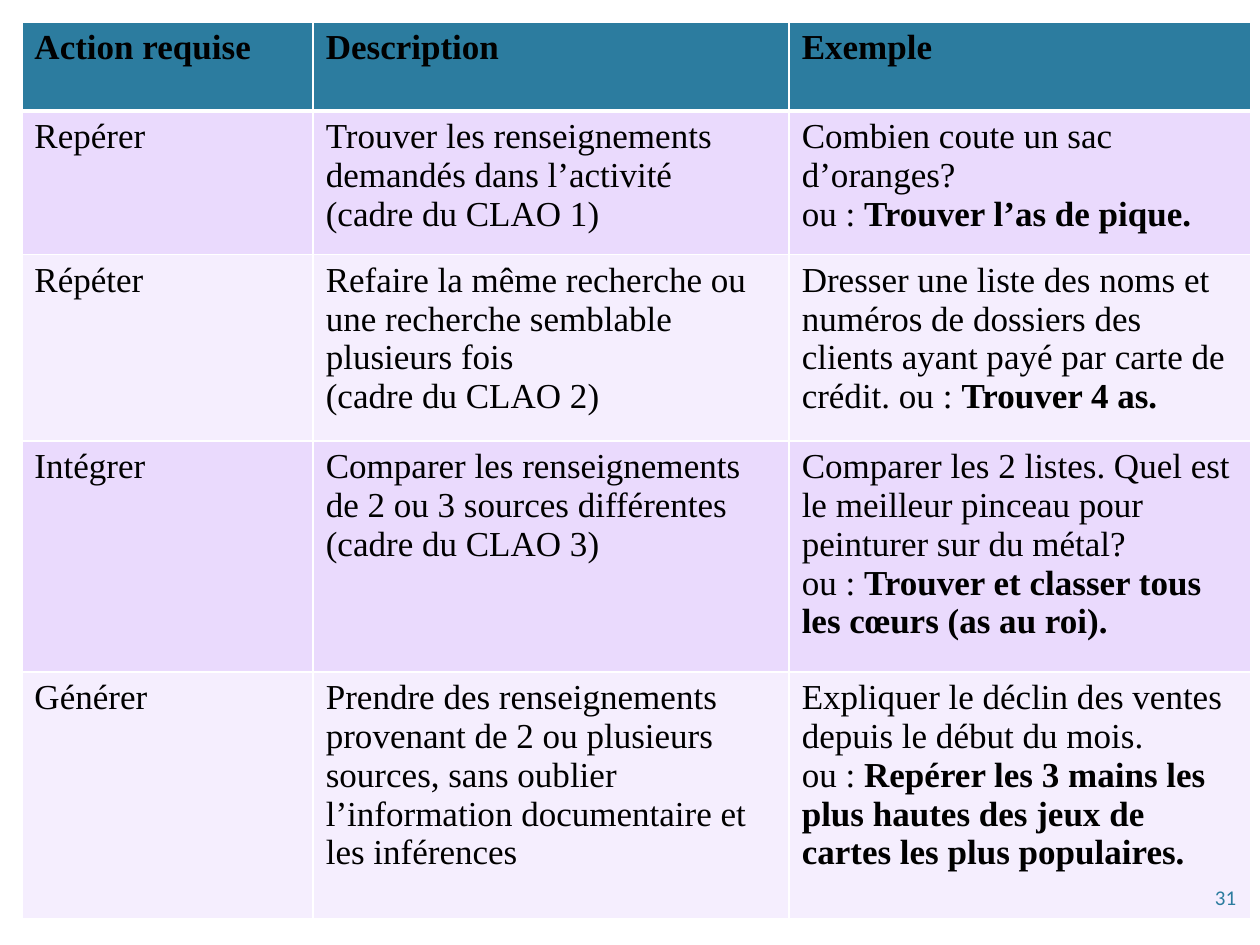
from dataclasses import dataclass

from lxml import etree
from pptx import Presentation
from pptx.dml.color import RGBColor
from pptx.enum import text as t
from pptx.oxml import ns
from pptx.table import _Cell
from pptx.text.text import TextFrame
from pptx.util import Pt

BLUE = RGBColor(0x2C, 0x7C, 0x9F)
LILAC = RGBColor(0xEA, 0xDA, 0xFD)
PALE = RGBColor(0xF5, 0xEE, 0xFE)
BLACK = RGBColor(0, 0, 0)
WHITE = RGBColor(0xFF, 0xFF, 0xFF)

COLUMN_WIDTHS = (166.5, 272, 263.5)
HEADER_HEIGHT = 51
HEADINGS = ("Action requise", "Description", "Exemple")


@dataclass
class Skill:
    height: float
    action: str
    description: str
    example: str
    card_game: str


SKILLS = (
    Skill(82, "Repérer",
          "Trouver les renseignements demandés dans l’activité \v(cadre du CLAO 1)",
          "Combien coute un sac d’oranges?\nou : ",
          "Trouver l’as de pique."),
    Skill(106.5, "Répéter",
          "Refaire la même recherche ou une recherche semblable plusieurs fois \v(cadre du CLAO 2)",
          "Dresser une liste des noms et numéros de dossiers des clients "
          "ayant payé par carte de crédit. ou : ",
          "Trouver 4 as."),
    Skill(132, "Intégrer",
          "Comparer les renseignements de 2 ou 3 sources différentes\n(cadre du CLAO 3)",
          "Comparer les 2 listes. Quel est le meilleur pinceau pour peinturer sur du métal?\nou : ",
          "Trouver et classer tous les cœurs (as au roi)."),
    Skill(141, "Générer",
          "Prendre des renseignements provenant de 2 ou plusieurs sources, "
          "sans oublier l’information documentaire et les inférences",
          "Expliquer le déclin des ventes depuis le début du mois.\nou : ",
          "Repérer les 3 mains les plus hautes des jeux de cartes les plus populaires."),
)


def write(frame: TextFrame, text: str, *, bold_end: str = "", bold: bool = False,
          font: str = "Times New Roman", size: float = 20, color: RGBColor = BLACK,
          align: t.PP_ALIGN = t.PP_ALIGN.LEFT) -> None:
    frame.word_wrap = True
    frame.text = text
    if bold_end:
        frame.paragraphs[-1].add_run().text = bold_end
    for para in frame.paragraphs:
        para.alignment = align
        for span in para.runs:
            span.font.name = font
            span.font.size = Pt(size)
            span.font.bold = bold
            span.font.color.rgb = color
    if bold_end:
        frame.paragraphs[-1].runs[-1].font.bold = True


def paint(cell: _Cell, fill: RGBColor, top: float = 1, bottom: float = 1) -> None:
    cell.fill.solid()
    cell.fill.fore_color.rgb = fill
    properties = cell._tc.get_or_add_tcPr()
    sides = (("L", 1), ("R", 1), ("T", top), ("B", bottom))
    for index, (side, width) in enumerate(sides):
        line = etree.Element(ns.qn(f"a:ln{side}"), w=str(Pt(width)))
        solid = etree.SubElement(line, ns.qn("a:solidFill"))
        etree.SubElement(solid, ns.qn("a:srgbClr"), val=str(WHITE))
        properties.insert(index, line)


def main() -> None:
    deck = Presentation()
    deck.slide_width, deck.slide_height = Pt(720), Pt(540)
    page = deck.slides.add_slide(deck.slide_layouts[6])

    heights = (HEADER_HEIGHT, *(skill.height for skill in SKILLS))
    table = page.shapes.add_table(
        len(heights), len(COLUMN_WIDTHS), Pt(12.5), Pt(12.5),
        Pt(sum(COLUMN_WIDTHS)), Pt(sum(heights))).table
    for column, width in zip(table.columns, COLUMN_WIDTHS):
        column.width = Pt(width)
    for row, height in zip(table.rows, heights):
        row.height = Pt(height)

    for column, heading in enumerate(HEADINGS):
        cell = table.cell(0, column)
        write(cell.text_frame, heading, bold=True)
        paint(cell, BLUE, bottom=3)

    for row, skill in enumerate(SKILLS, start=1):
        action, description, example = table.rows[row].cells
        write(action.text_frame, skill.action)
        write(description.text_frame, skill.description)
        write(example.text_frame, skill.example, bold_end=skill.card_game)
        for cell in (action, description, example):
            paint(cell, LILAC if row % 2 else PALE, top=3 if row == 1 else 1)

    number_box = page.shapes.add_textbox(Pt(636), Pt(498), Pt(77.5), Pt(29))
    number_box.text_frame.vertical_anchor = t.MSO_ANCHOR.MIDDLE
    write(number_box.text_frame, "31", font="Calibri", size=12, color=BLUE,
          align=t.PP_ALIGN.RIGHT)

    deck.save("out.pptx")


if __name__ == "__main__":
    main()
